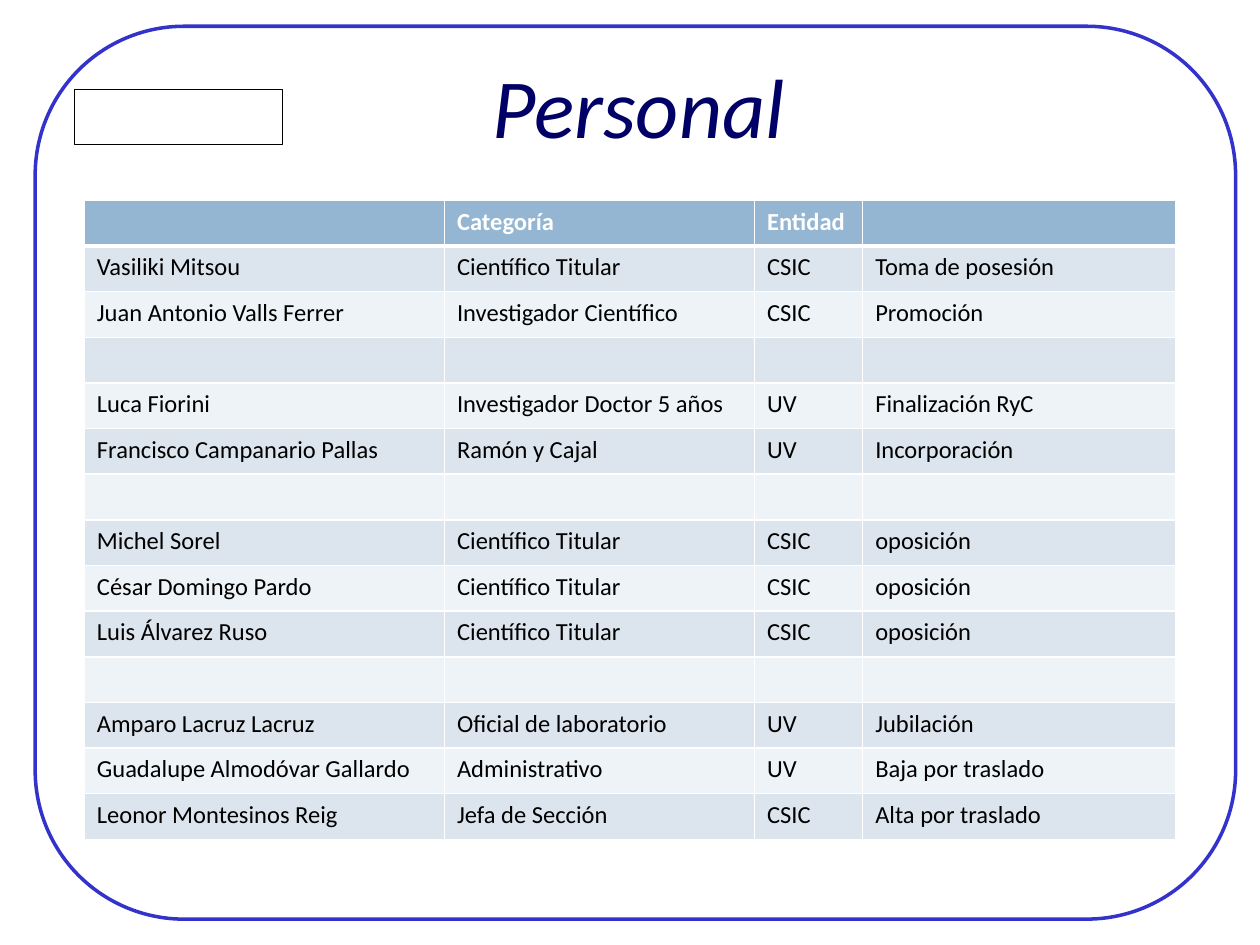
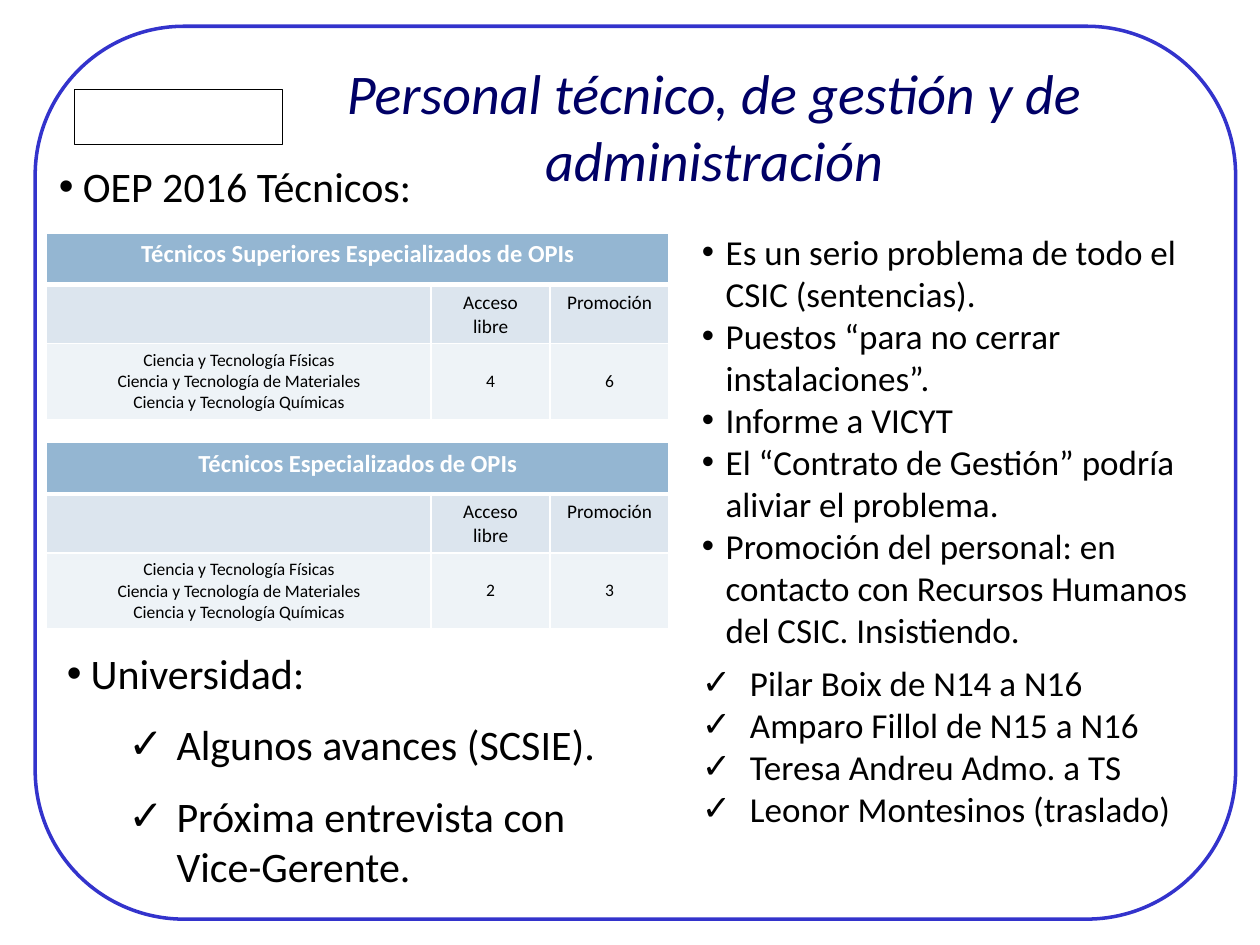
"""Build two slides on staff changes and technical personnel."""
from lxml import etree
from pptx import Presentation
from pptx import util as u
from pptx.dml.color import RGBColor
from pptx.enum import shapes, text
from pptx.oxml import ns

FONT = "Calibri"
COLORS = {
    "frame": "3333CC",
    "title": "000066",
    "text": "000000",
    "white": "FFFFFF",
    "header": "94B6D2",
    "odd": "DCE5EE",
    "even": "EEF3F7",
}
STAFF = [
    ("", "Categoría", "Entidad", ""),
    ("Vasiliki Mitsou", "Científico Titular", "CSIC", "Toma de posesión"),
    ("Juan Antonio Valls Ferrer", "Investigador Científico", "CSIC", "Promoción"),
    ("", "", "", ""),
    ("Luca Fiorini", "Investigador Doctor 5 años", "UV", "Finalización RyC"),
    ("Francisco Campanario Pallas", "Ramón y Cajal", "UV", "Incorporación"),
    ("", "", "", ""),
    ("Michel Sorel", "Científico Titular", "CSIC", "oposición"),
    ("César Domingo Pardo", "Científico Titular", "CSIC", "oposición"),
    ("Luis Álvarez Ruso", "Científico Titular", "CSIC", "oposición"),
    ("", "", "", ""),
    ("Amparo Lacruz Lacruz", "Oficial de laboratorio", "UV", "Jubilación"),
    ("Guadalupe Almodóvar Gallardo", "Administrativo", "UV", "Baja por traslado"),
    ("Leonor Montesinos Reig", "Jefa de Sección", "CSIC", "Alta por traslado"),
]
FIELDS = "\n".join(
    f"Ciencia y Tecnología {field}" for field in ("Físicas", "de Materiales", "Químicas")
)
OPENINGS = [
    (4.7, "Técnicos Superiores Especializados de OPIs", "4", "6"),
    (8.92, "Técnicos Especializados de OPIs", "2", "3"),
]
UNIVERSITY = [
    ("•", "Universidad:", 0.48, 12),
    ("✓", "Algunos avances (SCSIE).", 2.21, 12),
    ("✓", "Próxima entrevista con Vice-Gerente.", 2.21, 12),
]
ISSUES = [
    ("•", "Es un serio problema de todo el CSIC (sentencias).", 0.48, 0),
    ("•", "Puestos “para no cerrar instalaciones”.", 0.48, 0),
    ("•", "Informe a VICYT", 0.48, 0),
    ("•", "El “Contrato de Gestión” podría aliviar el problema.", 0.48, 0),
    ("•", "Promoción del personal: en contacto con Recursos Humanos del CSIC. Insistiendo.",
     0.48, 6),
    ("✓", "Pilar Boix de N14 a N16", 0.97, 0),
    ("✓", "Amparo Fillol de N15 a N16", 0.97, 0),
    ("✓", "Teresa Andreu Admo. a TS", 0.97, 0),
    ("✓", "Leonor Montesinos (traslado)", 0.97, 0),
]
HANGING = {"•": 0.48, "✓": 0.97}


def rgb(name):
    """Return a named colour."""
    return RGBColor.from_string(COLORS[name])


def style(paragraph, size, color="text", bold=False, italic=False):
    """Set the font of a paragraph."""
    font = paragraph.font
    font.name, font.size = FONT, u.Pt(size)
    font.bold, font.italic = bold, italic
    font.color.rgb = rgb(color)


def add_outline(slide, kind, box, color, width):
    """Add an unfilled outlined shape."""
    shape = slide.shapes.add_shape(kind, *map(u.Cm, box))
    shape.shadow.inherit = False
    shape.fill.background()
    shape.line.color.rgb = rgb(color)
    shape.line.width = u.Pt(width)


def add_text_frame(slide, box):
    """Add a wrapping text box and return its text frame."""
    frame = slide.shapes.add_textbox(*map(u.Cm, box)).text_frame
    frame.word_wrap = True
    return frame


def add_framed_slide(presentation, title, box, size):
    """Add a slide with the rounded frame, the label box and a title."""
    slide = presentation.slides.add_slide(presentation.slide_layouts[6])
    kinds = shapes.MSO_SHAPE
    add_outline(slide, kinds.ROUNDED_RECTANGLE, (0.71, 0.53, 24.2, 18), "frame", 2)
    add_outline(slide, kinds.RECTANGLE, (1.5, 1.8, 4.19, 1.12), "text", 0.5)
    frame = add_text_frame(slide, box)
    frame.vertical_anchor = text.MSO_ANCHOR.MIDDLE
    paragraph = frame.paragraphs[0]
    paragraph.text = title
    paragraph.alignment = text.PP_ALIGN.CENTER
    style(paragraph, size, "title", italic=True)
    return slide


def add_list(slide, box, items, size):
    """Add a bulleted list of (mark, wording, indent in cm, space after) items."""
    frame = add_text_frame(slide, box)
    for index, (mark, wording, indent, after) in enumerate(items):
        paragraph = frame.add_paragraph() if index else frame.paragraphs[0]
        paragraph.text = wording
        properties = paragraph._p.get_or_add_pPr()
        properties.set("marL", str(u.Cm(indent)))
        properties.set("indent", str(-u.Cm(HANGING[mark])))
        etree.SubElement(properties, ns.qn("a:buFont"), typeface="Arial")
        etree.SubElement(properties, ns.qn("a:buChar"), char=mark)
        paragraph.space_after = u.Pt(after)
        style(paragraph, size)


def set_borders(cell, row):
    """Draw white cell borders, thicker under the header row."""
    properties = cell._tc.get_or_add_tcPr()
    thick_side = {0: "B", 1: "T"}.get(row)
    for side in "LRTB":
        width = u.Pt(3 if side == thick_side else 1)
        line = etree.SubElement(properties, ns.qn(f"a:ln{side}"), w=str(width))
        fill = etree.SubElement(line, ns.qn("a:solidFill"))
        etree.SubElement(fill, ns.qn("a:srgbClr"), val=COLORS["white"])


def fill_cell(cell, row, wording, size, alignment):
    """Write and style one table cell."""
    set_borders(cell, row)
    cell.fill.solid()
    cell.fill.fore_color.rgb = rgb("header" if row == 0 else "odd" if row % 2 else "even")
    cell.text = wording
    for paragraph in cell.text_frame.paragraphs:
        paragraph.alignment = alignment
        style(paragraph, size, "white" if row == 0 else "text", bold=row == 0)
        if not wording:
            etree.SubElement(paragraph._p, ns.qn("a:endParaRPr"), sz=str(size * 100))


def add_table(slide, left, top, widths, height, rows, sizes, alignment):
    """Add a striped table with one font size per row and return it."""
    graphic = slide.shapes.add_table(
        len(rows), len(widths), u.Cm(left), u.Cm(top),
        u.Cm(sum(widths)), u.Cm(height * len(rows)))
    table = graphic.table
    for column, width in zip(table.columns, widths):
        column.width = u.Cm(width)
    for row, (wordings, size) in enumerate(zip(rows, sizes)):
        table.rows[row].height = u.Cm(height)
        for column, wording in enumerate(wordings):
            fill_cell(table.cell(row, column), row, wording, size, alignment)
    return table


def add_openings_table(slide, top, heading, free, promotion):
    """Add a table of open posts under a merged heading."""
    rows = [(heading, "", ""), ("", "Acceso libre", "Promoción"), (FIELDS, free, promotion)]
    table = add_table(slide, 0.94, top, (7.75, 2.4, 2.4), 1.04, rows,
                      (14, 11, 10), text.PP_ALIGN.CENTER)
    table.cell(0, 0).merge(table.cell(0, 2))
    for column in (1, 2):
        table.cell(2, column).vertical_anchor = text.MSO_ANCHOR.MIDDLE


def main():
    """Build and save the presentation."""
    presentation = Presentation()
    presentation.slide_width, presentation.slide_height = u.Cm(25.4), u.Cm(19.05)

    staff = add_framed_slide(presentation, "Personal", (1.45, 1.12, 22.86, 2), 48)
    add_table(staff, 1.7, 4.04, (7.26, 6.25, 2.18, 6.32), 0.92, STAFF,
              [14] * len(STAFF), text.PP_ALIGN.LEFT)

    technical = add_framed_slide(
        presentation, "Personal técnico, de gestión y de administración",
        (5.5, 0.74, 17.8, 3.6), 32)
    add_list(technical, (0.94, 3.12, 8.2, 1.28), [("•", "OEP 2016 Técnicos:", 0.48, 0)], 24)
    for opening in OPENINGS:
        add_openings_table(technical, *opening)
    add_list(technical, (1.1, 12.93, 12.4, 5.2), UNIVERSITY, 24)
    add_list(technical, (13.9, 4.52, 10.6, 13.28), ISSUES, 20)

    presentation.save("out.pptx")


if __name__ == "__main__":
    main()
